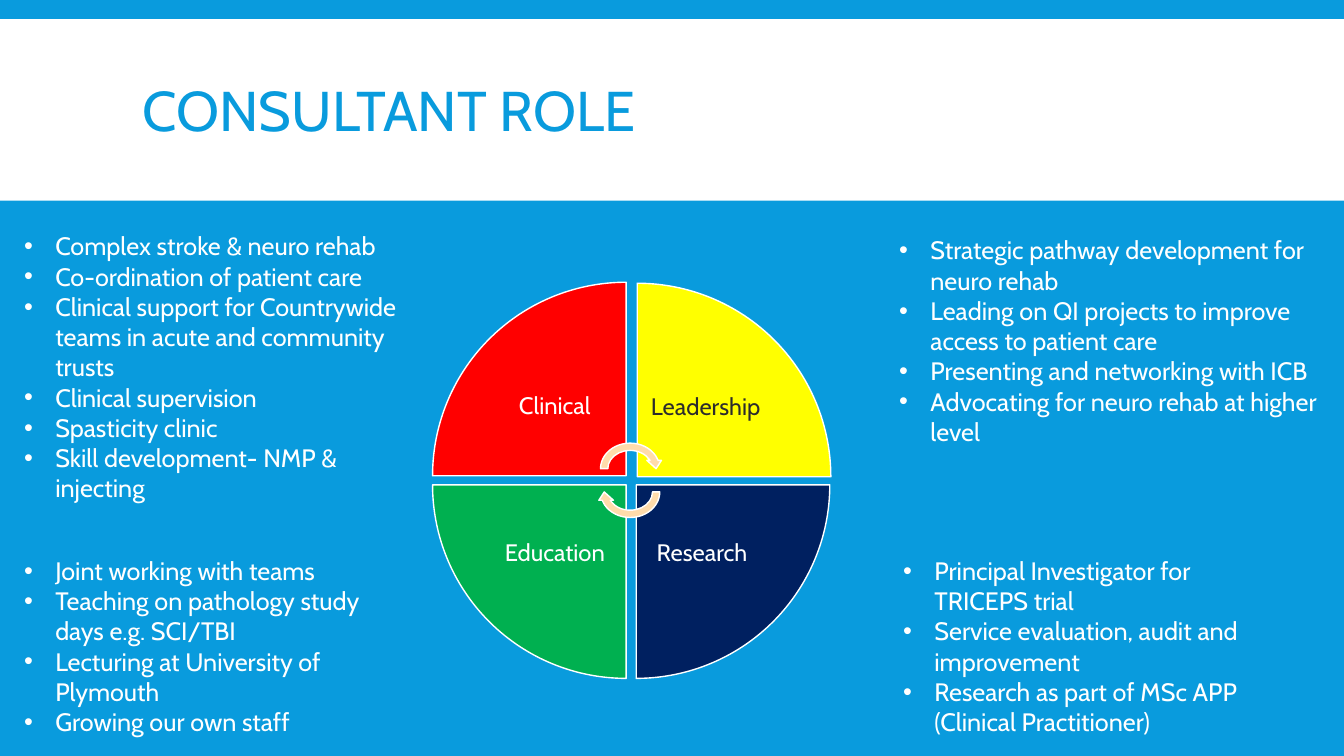
from pptx import Presentation
from pptx.dml.color import RGBColor
from pptx.enum.shapes import MSO_SHAPE as Preset
from pptx.enum.text import MSO_ANCHOR as Anchor, PP_ALIGN as Align
from pptx.util import Inches, Pt
from lxml import etree

FONT = "Cabin"
COLORS = {
    "blue": "099BDD", "white": "FFFFFF", "red": "FF0000", "yellow": "FFFF00",
    "navy": "002060", "green": "00B050", "peach": "FFDCAB", "dark": "2C2C2C",
}
TITLE = "CONSULTANT ROLE"
WEDGE_SIZE, LABEL_SIZE = 1.92, 1.36
# label, fill, text colour, left, top, rotation
WEDGES = [
    ("Clinical ", "red", "white", 4.29, 2.8, 0),
    ("Leadership", "yellow", "dark", 6.32, 2.81, 90),
    ("Research ", "navy", "white", 6.31, 4.81, 180),
    ("Education ", "green", "white", 4.29, 4.81, 270),
]
# top, rotation
ARROWS = [(4.36, 0), (4.59, 180)]
# left, top, width, height, items
LISTS = [
    (0.14, 2.24, 4.21, 2.52, [
        "Complex stroke & neuro rehab",
        "Co-ordination of patient care",
        "Clinical support for Countrywide teams in acute and community trusts",
        "Clinical supervision",
        "Spasticity clinic",
        "Skill development- NMP & injecting",
    ]),
    (8.82, 2.28, 4.38, 2.83, [
        "Strategic pathway development for neuro rehab",
        "Leading on QI projects to improve access to patient care",
        "Presenting and networking with ICB",
        "Advocating for neuro rehab at higher level",
    ]),
    (0.14, 5.46, 3.96, 1.92, [
        "Joint working with teams",
        "Teaching on pathology study days e.g. SCI/TBI",
        "Lecturing at University of Plymouth",
        "Growing our own staff",
    ]),
    (8.86, 5.46, 3.96, 1.92, [
        "Principal Investigator for TRICEPS trial",
        "Service evaluation, audit and improvement",
        "Research as part of MSc APP (Clinical Practitioner)",
    ]),
]


def color(name):
    return RGBColor.from_string(COLORS[name])


def add_preset(slide, preset, box, fill, line=None, rotation=0):
    shape = slide.shapes.add_shape(preset, *map(Inches, box))
    shape.shadow.inherit = False
    shape.rotation = rotation
    shape.fill.solid()
    shape.fill.fore_color.rgb = color(fill)
    if line:
        shape.line.color.rgb = color(line)
        shape.line.width = Pt(1)
    else:
        shape.line.fill.background()


def add_frame(slide, box, anchor):
    frame = slide.shapes.add_textbox(*map(Inches, box)).text_frame
    frame.word_wrap = True
    frame.vertical_anchor = anchor
    return frame


def add_run(paragraph, text, size, text_color):
    run = paragraph.add_run()
    run.text = text
    run.font.name = FONT
    run.font.size = Pt(size)
    run.font.color.rgb = color(text_color)


def add_bullet(paragraph):
    properties = paragraph._p.get_or_add_pPr()
    properties.set("marL", str(Inches(0.31)))
    properties.set("indent", str(-Inches(0.31)))
    namespace = properties.nsmap["a"]
    font = etree.SubElement(properties, f"{{{namespace}}}buFont")
    font.set("typeface", "Arial")
    bullet = etree.SubElement(properties, f"{{{namespace}}}buChar")
    bullet.set("char", "•")


def add_title(slide):
    paragraph = add_frame(slide, (1.32, 0.31, 10.7, 1.65), Anchor.MIDDLE).paragraphs[0]
    paragraph.line_spacing = 0.85
    add_run(paragraph, TITLE, 40, "blue")


def add_wedge(slide, label, fill, text_color, left, top, rotation):
    """Draw a quarter circle with its label in the corner nearest the centre."""
    add_preset(slide, Preset.PIE_WEDGE, (left, top, WEDGE_SIZE, WEDGE_SIZE),
               fill, "white", rotation)
    inset = WEDGE_SIZE - LABEL_SIZE
    label_left = left + (inset if rotation in (0, 270) else 0)
    label_top = top + (inset if rotation in (0, 90) else 0)
    frame = add_frame(slide, (label_left, label_top, LABEL_SIZE, LABEL_SIZE), Anchor.MIDDLE)
    frame.margin_left = frame.margin_right = Inches(0.13)
    frame.margin_top = frame.margin_bottom = Inches(0.13)
    paragraph = frame.paragraphs[0]
    paragraph.alignment = Align.CENTER
    paragraph.line_spacing = 0.9
    add_run(paragraph, label, 17, text_color)


def add_list(slide, box, items):
    frame = add_frame(slide, box, Anchor.TOP)
    for index, item in enumerate(items):
        paragraph = frame.add_paragraph() if index else frame.paragraphs[0]
        add_bullet(paragraph)
        add_run(paragraph, item, 18, "white")


def main():
    presentation = Presentation()
    presentation.slide_width = Inches(13.33)
    presentation.slide_height = Inches(7.5)
    slide = presentation.slides.add_slide(presentation.slide_layouts[6])
    slide.background.fill.solid()
    slide.background.fill.fore_color.rgb = color("blue")

    add_preset(slide, Preset.RECTANGLE, (0, 0.19, 13.33, 1.8), "white")
    add_title(slide)
    for wedge in WEDGES:
        add_wedge(slide, *wedge)
    for top, rotation in ARROWS:
        add_preset(slide, Preset.CIRCULAR_ARROW, (5.92, top, 0.66, 0.58),
                   "peach", "white", rotation)
    for *box, items in LISTS:
        add_list(slide, box, items)

    presentation.save("out.pptx")


if __name__ == "__main__":
    main()
